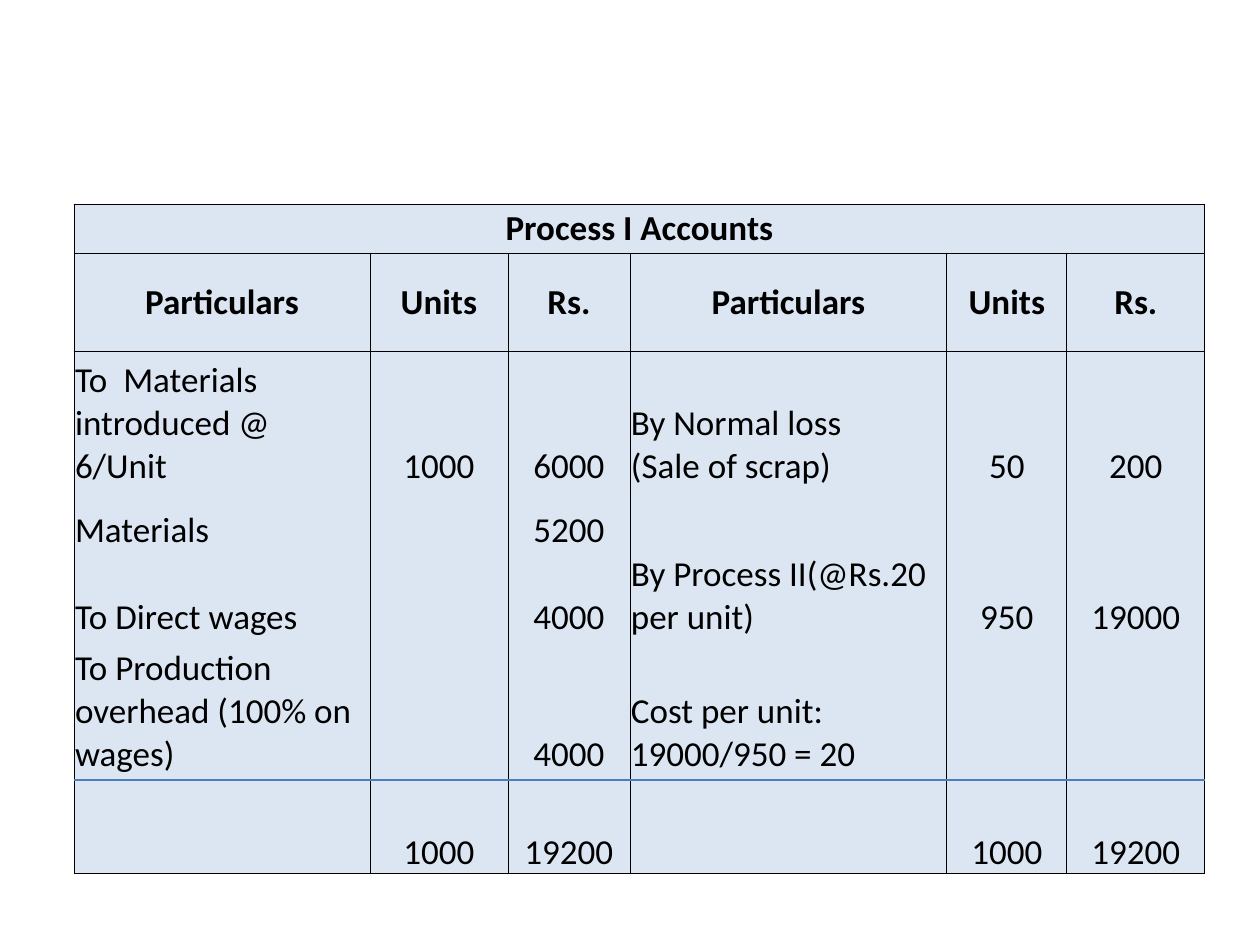
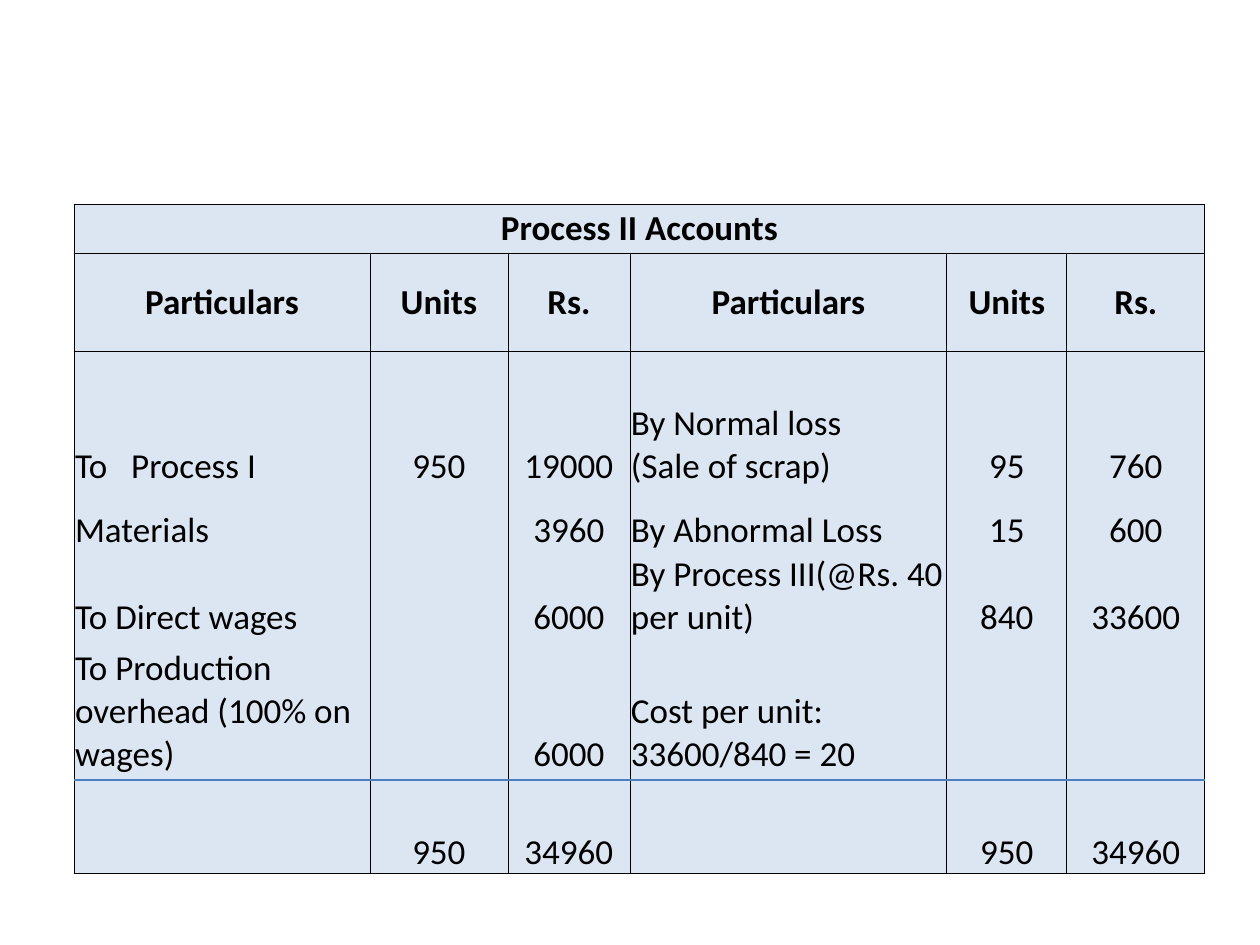
from lxml import etree
from pptx import Presentation
from pptx import util as u
from pptx.dml.color import RGBColor
from pptx.enum import shapes, text
from pptx.oxml import ns

PX = 914400 // 126  # one px in EMU
COLORS = {"ink": "000000", "panel": "DCE6F2", "rule": "4B7EBC"}

COLUMN_WIDTHS = [296, 138, 122, 317, 120, 138]
ROW_HEIGHTS = [49, 98, 137, 64, 69, 137, 98]
ACCOUNT_BOX = (74, 204, sum(COLUMN_WIDTHS))
TOTAL_RULE_DROP = 576  # from the top of the account to the rule above the totals
HEADINGS = ["Particulars", "Units", "Rs."] * 2
PARTICULARS_COLUMNS = (0, 3)

OVERHEAD = "To Production overhead (100% on wages)"
SCRAP = "By Normal loss\n(Sale of scrap)"
ACCOUNTS = [
    ("Process I Accounts", [
        ["To  Materials introduced @ 6/Unit", "1000", "6000", SCRAP, "50", "200"],
        ["Materials", "", "5200", "", "", ""],
        ["To Direct wages", "", "4000", "By Process II(@Rs.20 per unit)", "950", "19000"],
        [OVERHEAD, "", "4000", "Cost per unit:\n19000/950 = 20", "", ""],
        ["", "1000", "19200", "", "1000", "19200"],
    ]),
    ("Process II Accounts", [
        ["To   Process I", "950", "19000", SCRAP, "95", "760"],
        ["Materials", "", "3960", "By Abnormal Loss", "15", "600"],
        ["To Direct wages", "", "6000", "By Process III(@Rs. 40 per unit)", "840", "33600"],
        [OVERHEAD, "", "6000", "Cost per unit:\n33600/840 = 20", "", ""],
        ["", "950", "34960", "", "950", "34960"],
    ]),
]

HEADER_FONT = {"name": "Calibri", "size": u.Pt(20), "bold": True}
ENTRY_FONT = {**HEADER_FONT, "bold": False}
CELL_FORMAT = {"margin_left": PX, "margin_right": PX, "margin_top": PX, "margin_bottom": 0}


def rgb(name):
    return RGBColor.from_string(COLORS[name])


def apply(target, values):
    for attribute, value in values.items():
        setattr(target, attribute, value)


def set_borders(cell, drawn_sides):
    """Draw a thin border on the given sides and clear the others."""
    properties = cell._tc.get_or_add_tcPr()
    for side in "LRTB":
        border = etree.SubElement(properties, ns.qn(f"a:ln{side}"), w=str(u.Pt(0.5)))
        if side in drawn_sides:
            fill = etree.SubElement(border, ns.qn("a:solidFill"))
            etree.SubElement(fill, ns.qn("a:srgbClr"), val=COLORS["ink"])
        else:
            etree.SubElement(border, ns.qn("a:noFill"))


def borders_for(row):
    """Headers are boxed; entries have only column lines, closed at both ends."""
    if row < 2:
        return "LRTB"
    return "LR" + ("T" if row == 2 else "") + ("B" if row == len(ROW_HEIGHTS) - 1 else "")


def fill_cell(cell, wording, row, column):
    is_header = row < 2
    set_borders(cell, borders_for(row))
    cell.fill.solid()
    cell.fill.fore_color.rgb = rgb("panel")
    apply(cell, CELL_FORMAT)
    cell.vertical_anchor = text.MSO_ANCHOR.MIDDLE if is_header else text.MSO_ANCHOR.BOTTOM
    cell.text = wording
    centred = is_header or column not in PARTICULARS_COLUMNS
    for paragraph in cell.text_frame.paragraphs:
        paragraph.alignment = text.PP_ALIGN.CENTER if centred else text.PP_ALIGN.LEFT
        apply(paragraph.font, HEADER_FONT if is_header else ENTRY_FONT)
        for run in paragraph.runs:
            apply(run.font, HEADER_FONT if is_header else ENTRY_FONT)
            run.font.color.rgb = rgb("ink")


def add_ledger(slide, box, title, entries):
    left, top, width = box
    ledger = slide.shapes.add_table(
        len(ROW_HEIGHTS), len(COLUMN_WIDTHS),
        left * PX, top * PX, width * PX, sum(ROW_HEIGHTS) * PX).table
    apply(ledger, {"first_row": False, "horz_banding": False})
    for column, column_width in zip(ledger.columns, COLUMN_WIDTHS):
        column.width = column_width * PX
    for row, height in zip(ledger.rows, ROW_HEIGHTS):
        row.height = height * PX

    title_row = [title] + [""] * (len(COLUMN_WIDTHS) - 1)
    for r, wordings in enumerate([title_row, HEADINGS, *entries]):
        for c, wording in enumerate(wordings):
            fill_cell(ledger.cell(r, c), wording, r, c)
    ledger.cell(0, 0).merge(ledger.cell(0, len(COLUMN_WIDTHS) - 1))


def add_total_rule(slide, box):
    left, top, width = box
    y = (top + TOTAL_RULE_DROP) * PX
    rule = slide.shapes.add_connector(
        shapes.MSO_CONNECTOR.STRAIGHT, left * PX, y, (left + width) * PX, y)
    rule.line.color.rgb = rgb("rule")
    rule.line.width = u.Pt(0.75)
    etree.SubElement(rule._element.spPr, ns.qn("a:effectLst"))


def add_account_slide(deck, title, entries):
    slide = deck.slides.add_slide(deck.slide_layouts[6])
    add_ledger(slide, ACCOUNT_BOX, title, entries)
    add_total_rule(slide, ACCOUNT_BOX)


def main():
    deck = Presentation()
    apply(deck, {"slide_width": u.Inches(10), "slide_height": u.Inches(7.5)})
    for title, entries in ACCOUNTS:
        add_account_slide(deck, title, entries)
    deck.save("out.pptx")


if __name__ == "__main__":
    main()
